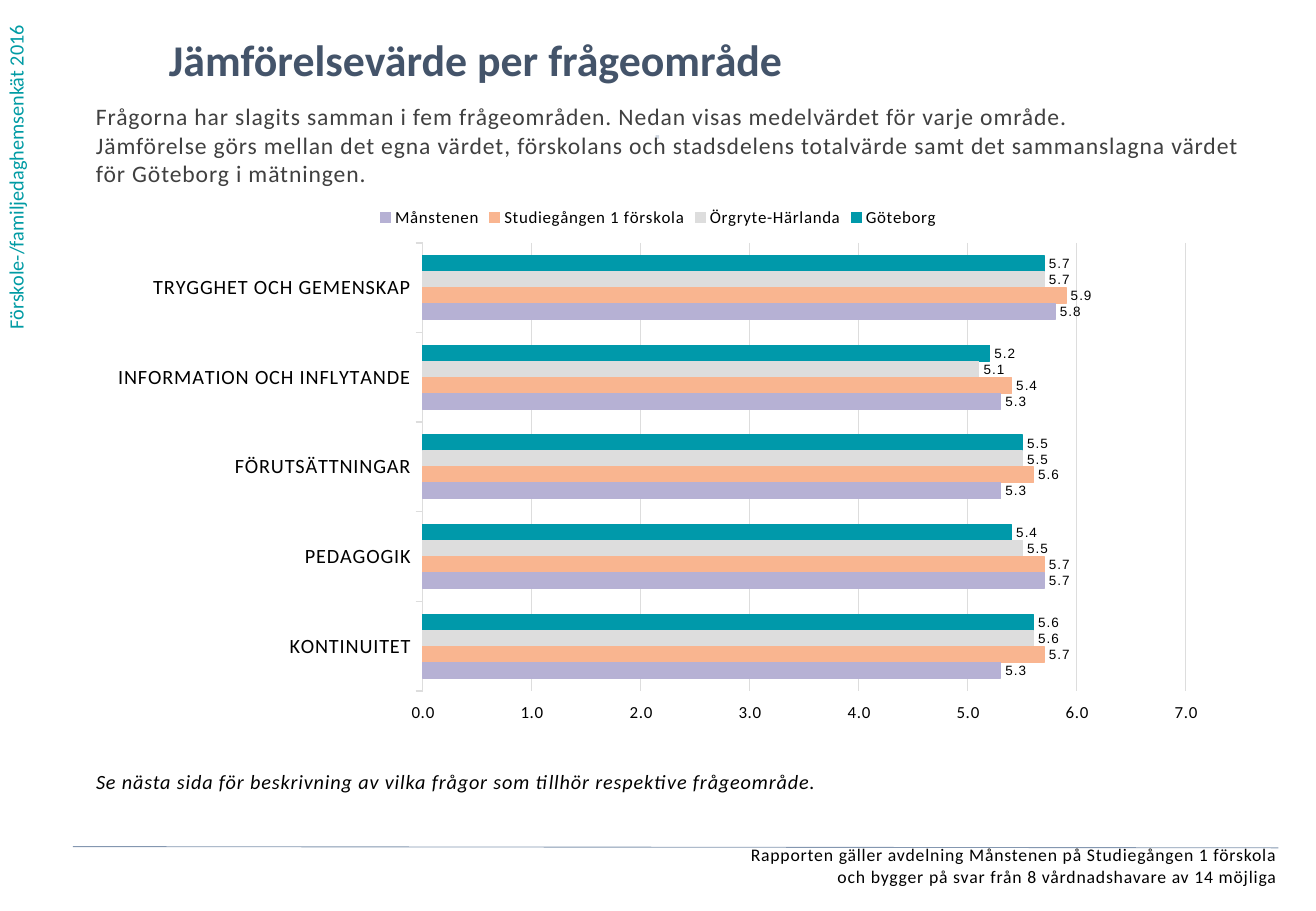
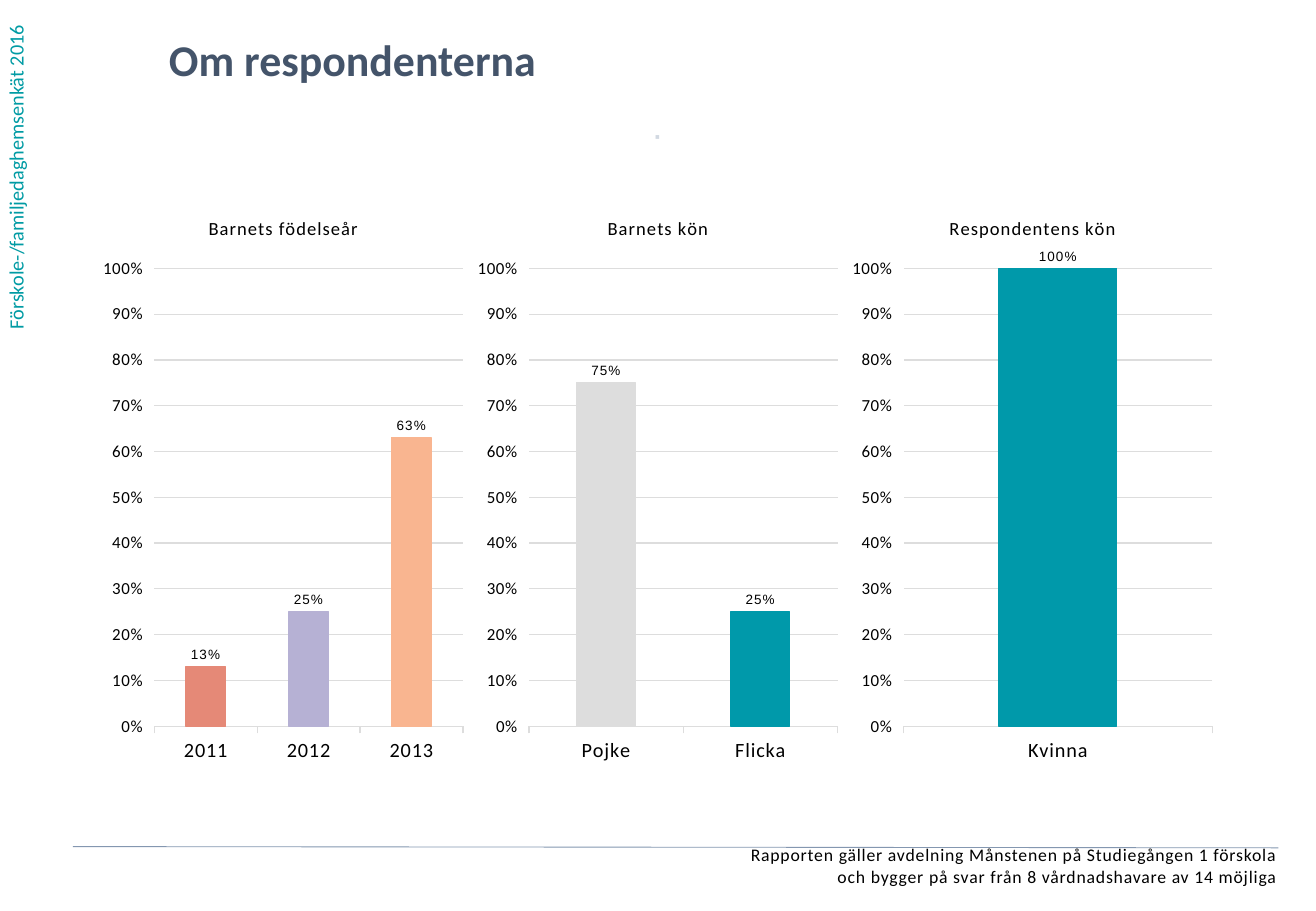
from lxml import etree
from pptx import Presentation
from pptx.chart.data import CategoryChartData
from pptx.dml.color import RGBColor
from pptx.enum.chart import XL_CHART_TYPE as ChartType
from pptx.enum.chart import XL_LABEL_POSITION as LabelPosition
from pptx.enum.chart import XL_LEGEND_POSITION as LegendPosition
from pptx.enum.chart import XL_TICK_LABEL_POSITION as TickLabelPosition
from pptx.enum.chart import XL_TICK_MARK as TickMark
from pptx.enum.shapes import MSO_CONNECTOR as Connector
from pptx.enum.text import PP_ALIGN as Align
from pptx.oxml.ns import qn
from pptx.util import Inches, Pt

COLORS = {
    "title": "44546A", "side": "009BA4", "body": "404040", "black": "000000",
    "dot": "D2D9E2", "rule": "8497B0", "teal": "0099AA", "gray": "DDDDDD",
    "peach": "F9B590", "lilac": "B6B1D4", "coral": "E58977",
}
FONT = "Calibri"
LABEL_FONT = "Arial"
SPACING = "50"  # letter spacing in hundredths of a point
LEFT, CONTENT_WIDTH, CHART_TOP = 0.79, 9.25, 1.6


def rgb(name):
    return RGBColor.from_string(COLORS[name])


def style_font(font, size, color="black", name=FONT, bold=False, italic=False):
    font.size, font.name, font.bold, font.italic = Pt(size), name, bold, italic
    font.color.rgb = rgb(color)


def write_text(text_frame, text, align=Align.LEFT, spaced=True, **style):
    """Write each line of text as one formatted paragraph."""
    for index, line in enumerate(text.split("\n")):
        paragraph = text_frame.add_paragraph() if index else text_frame.paragraphs[0]
        paragraph.alignment = align
        run = paragraph.add_run()
        run.text = line
        style_font(run.font, **style)
        if spaced:
            run.font._element.set("spc", SPACING)


class Report:
    def __init__(self):
        self.presentation = Presentation()
        self.presentation.slide_width = Inches(10.83)
        self.presentation.slide_height = Inches(7.5)
        self.slide = None

    def new_slide(self, title):
        """Start a slide with the side text, title, footer and rule."""
        self.slide = self.presentation.slides.add_slide(self.presentation.slide_layouts[6])
        self.text("Förskole-/familjedaghemsenkät 2016", -0.02, 0, 0.4, 2.81,
                  vertical=True, size=12, color="side", spaced=False)
        self.text(title, 1.39, 0.27, 8.34, 0.57, size=26, color="title",
                  bold=True, spaced=False)
        self.text("Rapporten gäller avdelning Månstenen på Studiegången 1 förskola\n"
                  "och bygger på svar från 8 vårdnadshavare av 14 möjliga",
                  0.12, 6.95, 10.39, 0.43, align=Align.RIGHT, size=10.5)
        self.text("⋅", 3.87, 1.02, 3.08, 0.39, align=Align.CENTER, size=12,
                  color="dot", bold=True)
        self.rule(0.6, 6.97, 10.52, 6.98)

    def text(self, text, left, top, width, height, vertical=False, **style):
        shape = self.slide.shapes.add_textbox(
            Inches(left), Inches(top), Inches(width), Inches(height))
        frame = shape.text_frame
        frame.word_wrap = True
        if vertical:
            frame._txBody.bodyPr.set("vert", "vert270")
        else:
            frame.margin_left = frame.margin_right = 0
            frame.margin_top = frame.margin_bottom = 0
        write_text(frame, text, **style)

    def rule(self, x1, y1, x2, y2):
        line = self.slide.shapes.add_connector(
            Connector.STRAIGHT, Inches(x1), Inches(y1), Inches(x2), Inches(y2))
        line.line.color.rgb = rgb("rule")
        line.line.width = Pt(0.5)
        etree.SubElement(line._element.spPr, qn("a:effectLst"))

    def chart(self, kind, left, width, height, categories, series, maximum, unit,
              number_format, plot, title=None, point_colors=()):
        """Add a bar or column chart; series holds (name, color, values)."""
        data = CategoryChartData()
        data.categories = categories
        for name, _, values in series:
            data.add_series(name, values)
        chart = self.slide.shapes.add_chart(
            kind, Inches(left), Inches(CHART_TOP), Inches(width), Inches(height), data).chart
        style_font(chart.font, 10)

        # Title or legend
        chart.has_title = title is not None
        if title:
            write_text(chart.chart_title.text_frame, title, align=Align.CENTER, size=11)
            chart.chart_title.include_in_layout = False
        chart.has_legend = title is None
        if chart.has_legend:
            chart.legend.position = LegendPosition.TOP
            chart.legend.include_in_layout = False
            style_font(chart.legend.font, 10)

        # Axes: reversed categories, so the value labels go to the high end
        category_axis, value_axis = chart.category_axis, chart.value_axis
        category_axis.reverse_order = True
        category_axis.has_major_gridlines = False
        value_axis.minimum_scale, value_axis.maximum_scale = 0, maximum
        value_axis.major_unit = unit
        value_axis.has_major_gridlines = True
        value_axis.tick_label_position = TickLabelPosition.HIGH
        value_axis.tick_labels.number_format = number_format
        value_axis.tick_labels.number_format_is_linked = False
        for axis, size in ((category_axis, 12), (value_axis, 10)):
            axis.major_tick_mark = TickMark.OUTSIDE
            style_font(axis.tick_labels.font, size)
        for line in (category_axis.format.line, value_axis.major_gridlines.format.line):
            line.color.rgb = rgb("gray")
            line.width = Pt(0.75)
        value_axis.format.line.fill.background()

        # Bars and their labels
        bars = chart.plots[0]
        bars.gap_width, bars.overlap = 162, 0
        bars.vary_by_categories = False
        for item, (_, color, _) in zip(bars.series, series):
            self.paint(item.format, color)
            for index, point_color in enumerate(point_colors):
                self.paint(item.points[index].format, point_color)
            labels = item.data_labels
            labels.show_value = True
            labels.position = LabelPosition.OUTSIDE_END
            labels.number_format = number_format
            labels.number_format_is_linked = False
            style_font(labels.font, 8, name=LABEL_FONT)
        x, y, plot_width, plot_height = plot
        self.finish_chart(
            chart, (x / width, y / height, plot_width / width, plot_height / height))

    @staticmethod
    def paint(bar_format, color):
        bar_format.fill.solid()
        bar_format.fill.fore_color.rgb = rgb(color)
        bar_format.line.color.rgb = rgb(color)
        bar_format.line.width = Pt(0.75)

    @staticmethod
    def finish_chart(chart, fractions):
        """Set letter spacing and the inner plot area (x, y, w, h)."""
        for properties in chart.element.iter(qn("a:defRPr")):
            properties.set("spc", SPACING)
        plot_area = next(chart.element.iter(qn("c:plotArea")))
        for old_layout in plot_area.findall(qn("c:layout")):
            plot_area.remove(old_layout)
        layout = etree.Element(qn("c:layout"))
        manual = etree.SubElement(layout, qn("c:manualLayout"))
        settings = [("layoutTarget", "inner"), ("xMode", "edge"), ("yMode", "edge")]
        for tag, value in settings + list(zip("xywh", fractions)):
            etree.SubElement(manual, qn(f"c:{tag}")).set("val", str(value))
        plot_area.insert(0, layout)


def add_comparison(report):
    report.new_slide("Jämförelsevärde per frågeområde")
    report.text("Frågorna har slagits samman i fem frågeområden. Nedan visas medelvärdet "
                "för varje område.\nJämförelse görs mellan det egna värdet, förskolans och "
                "stadsdelens totalvärde samt det sammanslagna värdet för Göteborg i mätningen.",
                LEFT, 0.84, 9.46, 0.75, size=14, color="body")
    report.chart(
        ChartType.BAR_CLUSTERED, LEFT, CONTENT_WIDTH, 4.43,
        ["TRYGGHET OCH GEMENSKAP", "INFORMATION OCH INFLYTANDE", "FÖRUTSÄTTNINGAR",
         "PEDAGOGIK", "KONTINUITET"],
        [("Göteborg", "teal", (5.7, 5.2, 5.5, 5.4, 5.6)),
         ("Örgryte-Härlanda", "gray", (5.7, 5.1, 5.5, 5.5, 5.6)),
         ("Studiegången 1 förskola", "peach", (5.9, 5.4, 5.6, 5.7, 5.7)),
         ("Månstenen", "lilac", (5.8, 5.3, 5.3, 5.7, 5.3))],
        maximum=7, unit=1, number_format="0.0;0.0", plot=(2.69, 0.4, 6.28, 3.69))
    report.text("Se nästa sida för beskrivning av vilka frågor som tillhör respektive "
                "frågeområde.", LEFT, 6.33, CONTENT_WIDTH, 0.3, size=12, italic=True)


def add_respondents(report):
    report.new_slide("Om respondenterna")
    groups = [
        ("Barnets födelseår", ["2013", "2012", "2011"], (0.63, 0.25, 0.13),
         ("peach", "lilac", "coral")),
        ("Barnets kön", ["Flicka", "Pojke"], (0.25, 0.75), ("teal", "gray")),
        ("Respondentens kön", ["Kvinna"], (1,), ("teal",)),
    ]
    width = CONTENT_WIDTH / len(groups)
    for index, (title, categories, values, colors) in enumerate(groups):
        report.chart(
            ChartType.COLUMN_CLUSTERED, LEFT + index * width, width, 4.76, categories,
            [("Series 1", "teal", values)], maximum=1, unit=0.1, number_format="0%;0%",
            plot=(0.48, 0.61, 2.54, 3.77), title=title, point_colors=colors)


def main():
    report = Report()
    add_comparison(report)
    add_respondents(report)
    report.presentation.save("out.pptx")


if __name__ == "__main__":
    main()
